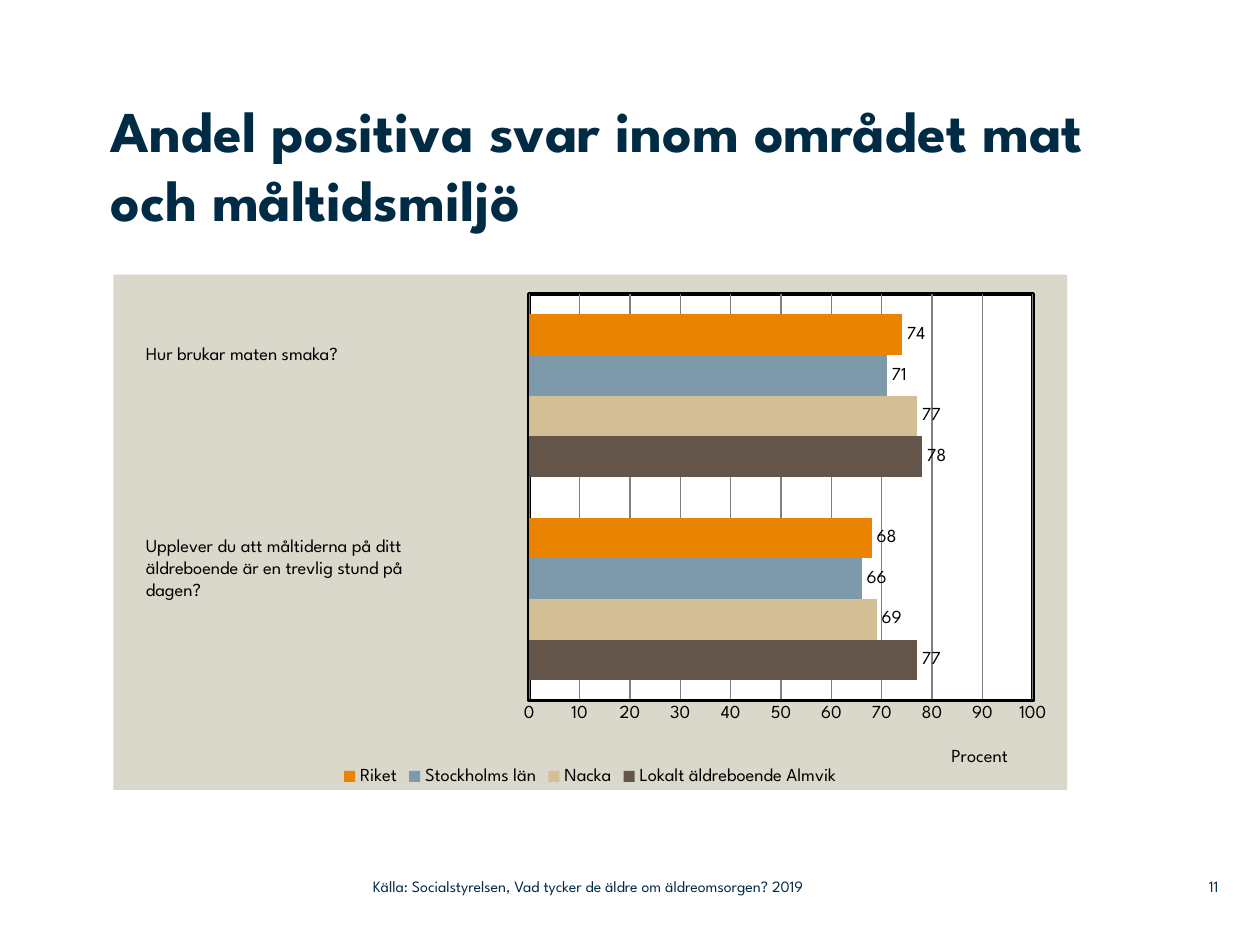
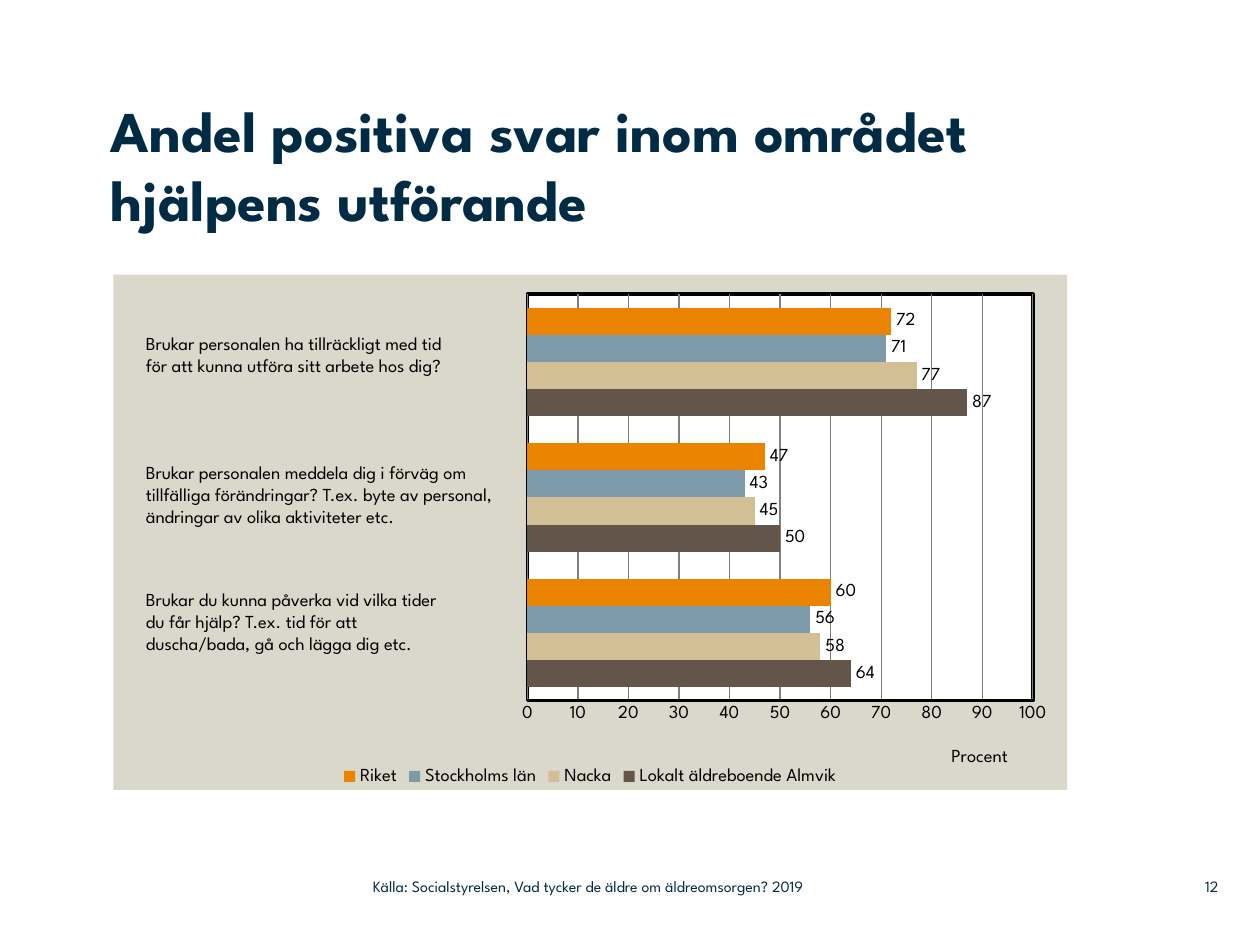
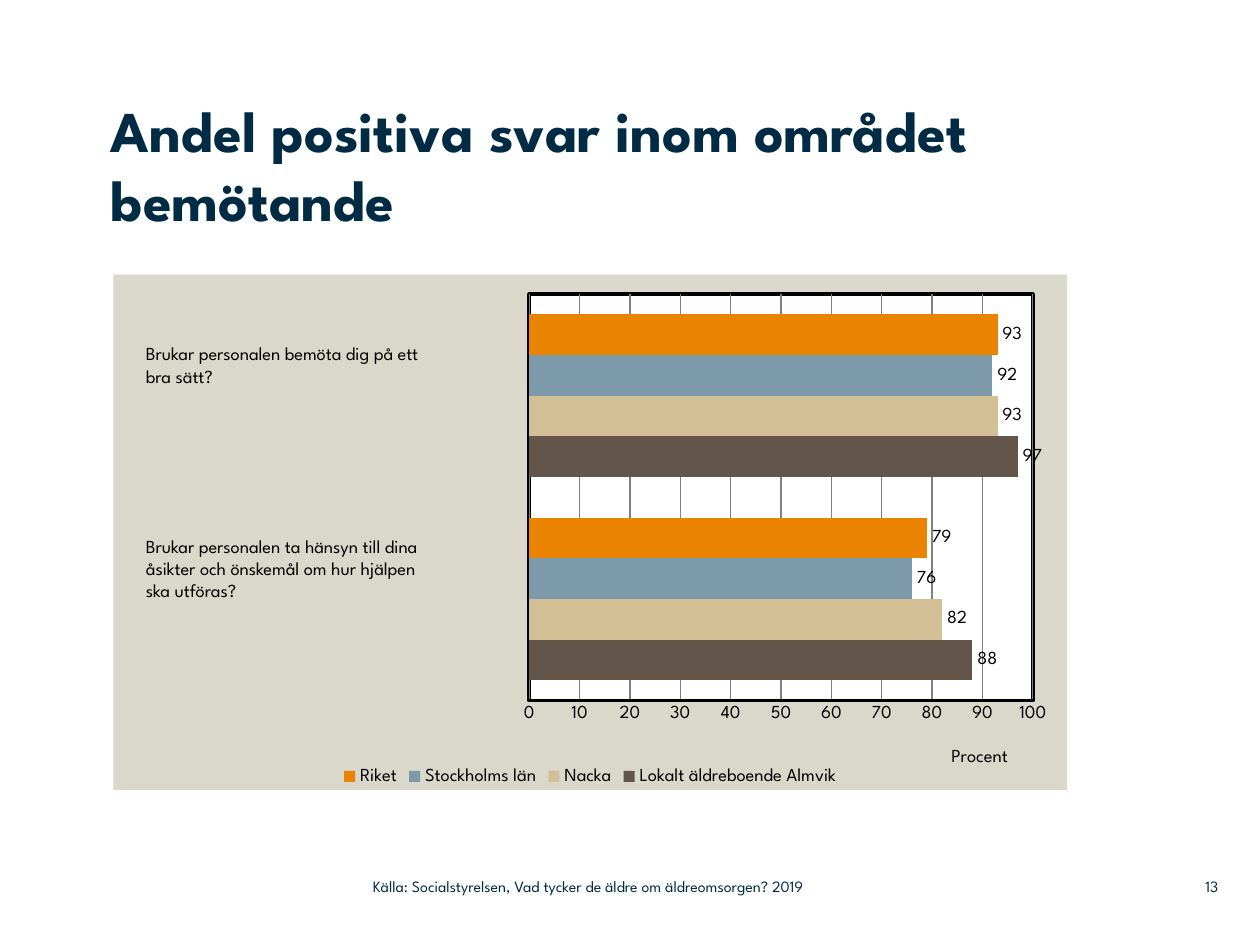
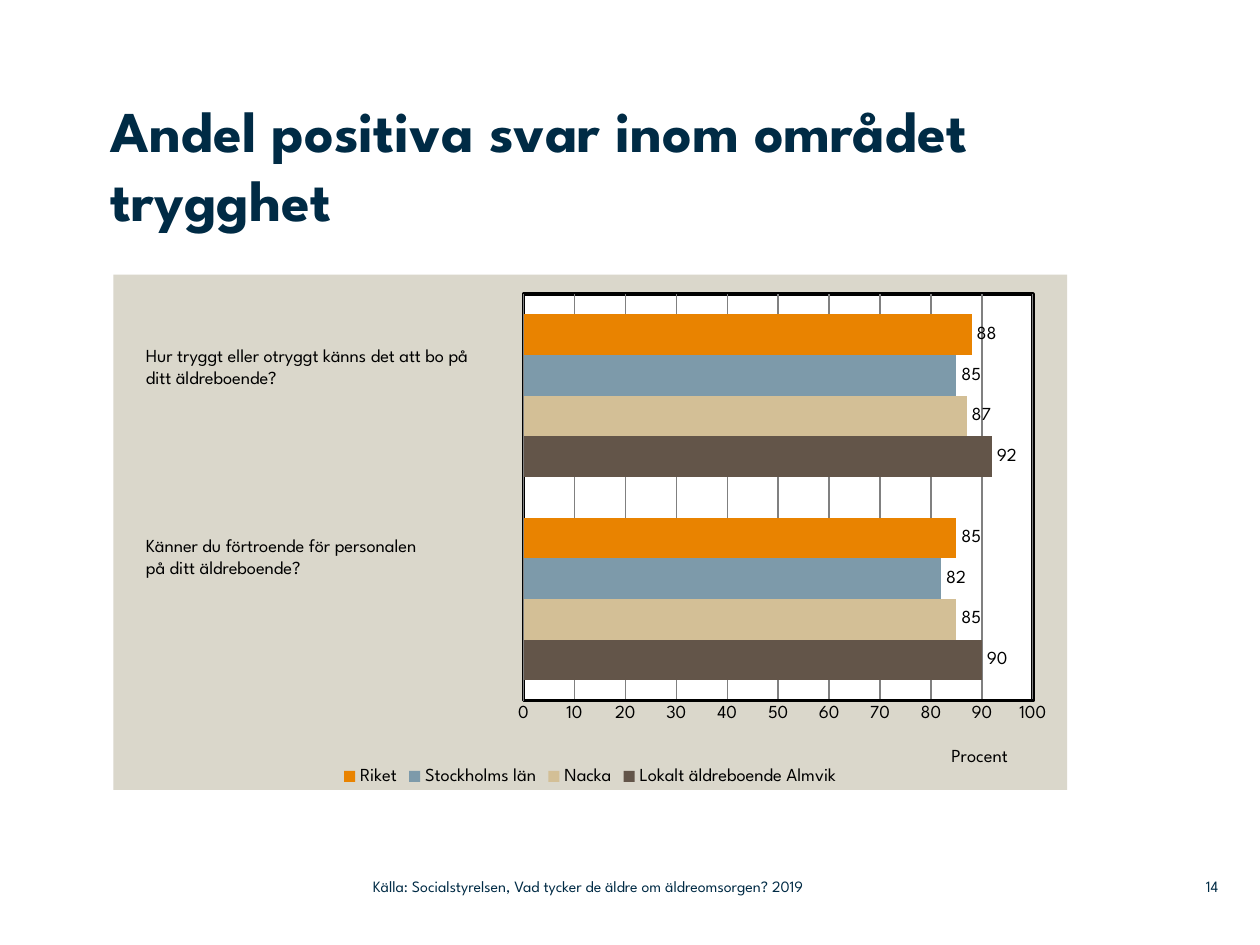
from lxml import etree
from pptx import Presentation
from pptx.chart.data import CategoryChartData
from pptx.dml.color import RGBColor
from pptx.enum import chart as ch, text as t
from pptx.oxml import parse_xml
from pptx.oxml.ns import nsdecls, qn
from pptx.util import Inches, Pt

FONT = "League Spartan"
NAVY = RGBColor(0x00, 0x2B, 0x45)
BLACK = RGBColor(0x00, 0x00, 0x00)
GRID_GREY = RGBColor(0x80, 0x80, 0x80)
PANEL = RGBColor(0xDA, 0xD7, 0xCB)
WHITE = RGBColor(0xFF, 0xFF, 0xFF)

# Bars are stacked upwards, so the lowest bar of each group comes first.
SERIES = [
    ("Lokalt äldreboende Almvik", RGBColor(0x63, 0x55, 0x49)),
    ("Nacka", RGBColor(0xD3, 0xBF, 0x96)),
    ("Stockholms län", RGBColor(0x7D, 0x9A, 0xAA)),
    ("Riket", RGBColor(0xE9, 0x83, 0x00)),
]
SOURCE = "Källa: Socialstyrelsen, Vad tycker de äldre om äldreomsorgen? 2019"
FIRST_PAGE = 11
PLOT_RIGHT = 0.964

# Questions are (top, text); each row of values belongs to one entry of SERIES.
PAGES = [
    dict(title="Andel positiva svar inom området mat och måltidsmiljö",
         title_width=8.42, plot_left=0.436,
         questions=[
             (2.67, "Hur brukar maten smaka?"),
             (4.19, "Upplever du att måltiderna på ditt äldreboende är en "
                    "trevlig stund på\ndagen?")],
         values=[(77, 78), (69, 77), (66, 71), (68, 74)]),
    dict(title="Andel positiva svar inom området hjälpens utförande",
         plot_left=0.434,
         questions=[
             (2.59, "Brukar personalen ha tillräckligt med tid\n"
                    "för att kunna utföra sitt arbete hos dig?"),
             (3.61, "Brukar personalen meddela dig i förväg om tillfälliga "
                    "förändringar? T.ex. byte av personal, ändringar av olika "
                    "aktiviteter etc."),
             (4.62, "Brukar du kunna påverka vid vilka tider\n"
                    "du får hjälp? T.ex. tid för att\n"
                    "duscha/bada, gå och lägga dig etc.")],
         values=[(64, 50, 87), (58, 45, 77), (56, 43, 71), (60, 47, 72)]),
    dict(title="Andel positiva svar inom området bemötande",
         plot_left=0.436,
         questions=[
             (2.67, "Brukar personalen bemöta dig på ett\nbra sätt?"),
             (4.2, "Brukar personalen ta hänsyn till dina\n"
                   "åsikter och önskemål om hur hjälpen\nska utföras?")],
         values=[(88, 97), (82, 93), (76, 92), (79, 93)]),
    dict(title="Andel positiva svar inom området trygghet",
         plot_left=0.43,
         questions=[
             (2.68, "Hur tryggt eller otryggt känns det att bo på "
                    "ditt äldreboende?"),
             (4.19, "Känner du förtroende för personalen\n"
                    "på ditt äldreboende?")],
         values=[(90, 92), (85, 87), (82, 85), (85, 88)]),
]


def place(shape, left, top, width, height):
    shape.left, shape.top = Inches(left), Inches(top)
    shape.width, shape.height = Inches(width), Inches(height)


def style_font(font, size, color, bold=False):
    font.name, font.size, font.bold = FONT, Pt(size), bold
    font.color.rgb = color


def write(shape, content, size=10.5, color=BLACK, bold=False, inset=True,
          align=t.PP_ALIGN.LEFT, anchor=t.MSO_ANCHOR.TOP,
          fit=t.MSO_AUTO_SIZE.NONE):
    """Fill a shape with text, one paragraph per line."""
    frame = shape.text_frame
    frame.text = content
    frame.word_wrap, frame.auto_size = True, fit
    frame.vertical_anchor = anchor
    if not inset:
        frame.margin_left = frame.margin_right = 0
        frame.margin_top = frame.margin_bottom = 0
    for paragraph in frame.paragraphs:
        paragraph.alignment = align
        for run in paragraph.runs:
            style_font(run.font, size, color, bold)


def add_label(slide, content, box, **style):
    write(slide.shapes.add_textbox(*map(Inches, box)), content, **style)


def set_layout(parent, index, **fractions):
    """Give a chart part a fixed place, in fractions of the chart."""
    for old in parent.findall(qn("c:layout")):
        parent.remove(old)
    layout = parse_xml(f"<c:layout {nsdecls('c')}><c:manualLayout/></c:layout>")
    for tag, value in fractions.items():
        etree.SubElement(layout[0], qn(f"c:{tag}")).set("val", str(value))
    parent.insert(index, layout)


def area_format(fill, line=None):
    outline = (f'<a:ln w="{Pt(2)}"><a:solidFill><a:srgbClr val="{line}"/>'
               "</a:solidFill></a:ln>" if line else "<a:ln><a:noFill/></a:ln>")
    return parse_xml(f'<c:spPr {nsdecls("c", "a")}><a:solidFill>'
                     f'<a:srgbClr val="{fill}"/></a:solidFill>{outline}</c:spPr>')


def format_percent_axis(axis):
    axis.minimum_scale, axis.maximum_scale, axis.major_unit = 0, 100, 10
    axis.major_tick_mark = axis.minor_tick_mark = ch.XL_TICK_MARK.NONE
    axis.format.line.color.rgb = BLACK
    axis.format.line.width = Pt(2)
    axis.major_gridlines.format.line.color.rgb = GRID_GREY
    axis.major_gridlines.format.line.width = Pt(0.75)
    style_font(axis.tick_labels.font, 10.5, BLACK)
    title = axis.axis_title
    title.text_frame.text = "Procent"
    style_font(title.text_frame.paragraphs[0].runs[0].font, 10.5, BLACK)
    set_layout(title._element, 1, xMode="edge", yMode="edge", x=0.875, y=0.91)


def add_answer_chart(slide, values, plot_left):
    data = CategoryChartData()
    data.categories = [str(n + 1) for n in range(len(values[0]))]
    for (name, _), row in zip(SERIES, values):
        data.add_series(name, row)
    chart = slide.shapes.add_chart(
        ch.XL_CHART_TYPE.BAR_CLUSTERED, Inches(0.9), Inches(2.18),
        Inches(7.57), Inches(4.09), data).chart
    style_font(chart.font, 10.5, BLACK)
    chart.has_title = False
    chart.has_legend = True
    chart.legend.position = ch.XL_LEGEND_POSITION.BOTTOM
    chart.legend.include_in_layout = False
    style_font(chart.legend.font, 10.5, BLACK)
    chart.category_axis.visible = False
    format_percent_axis(chart.value_axis)

    bars = chart.plots[0]
    bars.gap_width, bars.overlap, bars.vary_by_categories = 100, 0, False
    for series, (_, color) in zip(bars.series, SERIES):
        series.format.fill.solid()
        series.format.fill.fore_color.rgb = color
        labels = series.data_labels
        labels.show_value = True
        labels.position = ch.XL_LABEL_POSITION.OUTSIDE_END
        style_font(labels.font, 10.5, BLACK)

    space = chart.element
    space.find(qn("c:txPr")).addprevious(area_format(PANEL))
    plot_area = space.find(qn("c:chart")).find(qn("c:plotArea"))
    plot_area.append(area_format(WHITE, BLACK))
    set_layout(plot_area, 0, layoutTarget="inner", xMode="edge", yMode="edge",
               x=plot_left, y=0.038, w=round(PLOT_RIGHT - plot_left, 3), h=0.789)


def add_footer(slide, page):
    style = dict(size=9, color=NAVY, inset=False, anchor=t.MSO_ANCHOR.MIDDLE)
    add_label(slide, str(page), (9.2, 6.89, 0.47, 0.29),
              align=t.PP_ALIGN.RIGHT, **style)
    add_label(slide, SOURCE, (2.96, 6.89, 4.43, 0.29), **style)


def add_page(prs, page, title, questions, values, plot_left, title_width=7.6):
    slide = prs.slides.add_slide(prs.slide_layouts.get_by_name("Title Only"))
    add_answer_chart(slide, values, plot_left)
    heading = slide.shapes.title
    place(heading, 0.88, 0.75, title_width, 1.42)
    write(heading, title, size=33, color=NAVY, bold=True, inset=False)
    for top, question in questions:
        add_label(slide, question, (1.06, top, 2.97, 0.45),
                  fit=t.MSO_AUTO_SIZE.SHAPE_TO_FIT_TEXT)
    add_footer(slide, page)


def main():
    prs = Presentation()
    prs.slide_width, prs.slide_height = Inches(10), Inches(7.5)
    for page, content in enumerate(PAGES, FIRST_PAGE):
        add_page(prs, page, **content)
    prs.save("out.pptx")


if __name__ == "__main__":
    main()
